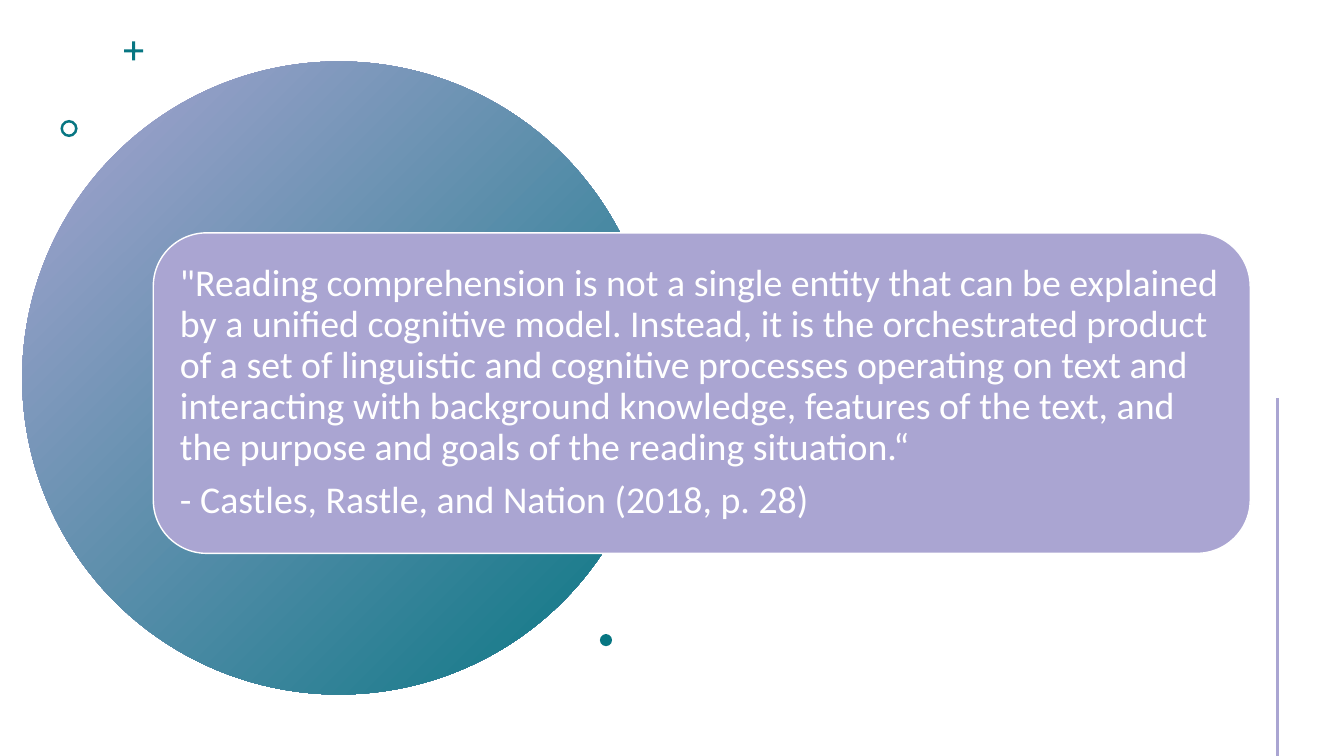
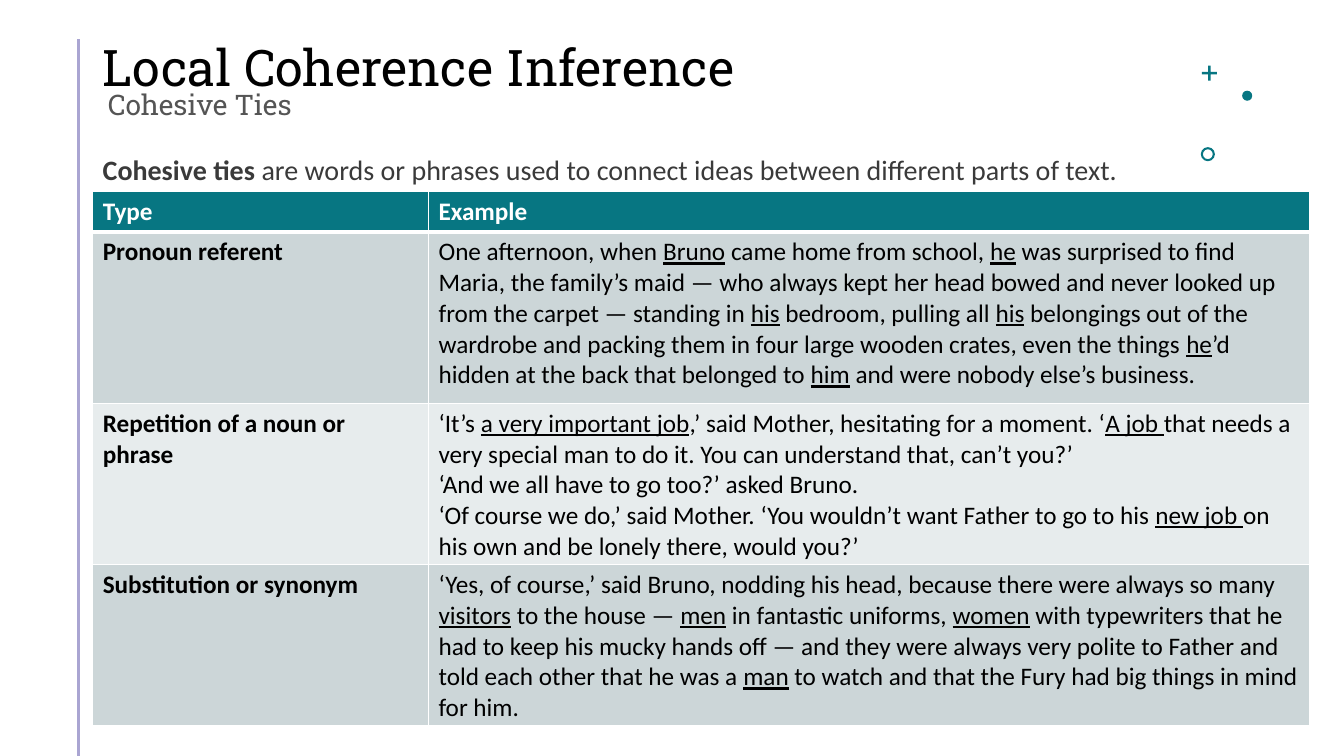
from lxml.etree import SubElement
from pptx import Presentation
from pptx.dml.color import RGBColor
from pptx.enum.shapes import MSO_CONNECTOR, MSO_SHAPE
from pptx.enum.text import MSO_ANCHOR, PP_ALIGN
from pptx.oxml.ns import qn
from pptx.util import Inches, Pt

TEAL = RGBColor(0x07, 0x76, 0x82)
LILAC = RGBColor(0xAA, 0xA5, 0xD2)
WHITE = RGBColor(0xFF, 0xFF, 0xFF)
BLACK = RGBColor(0, 0, 0)
GREY = RGBColor(0x55, 0x55, 0x55)
DARK = RGBColor(0x3A, 0x3A, 0x3A)
BANDS = (RGBColor(0xCC, 0xD6, 0xD8), RGBColor(0xE7, 0xEC, 0xED))
HEAD, BODY = "Roboto Slab", "Calibri"

QUOTE = [
    '"Reading comprehension is not a single entity that can be explained by a '
    "unified cognitive model. Instead, it is the orchestrated product of a set of "
    "linguistic and cognitive processes operating on text and interacting with "
    "background knowledge, features of the text, and the purpose and goals of the "
    "reading situation.“",
    "- Castles, Rastle, and Nation (2018, p. 28)",
]

# Underlined words stand between underscores
TIES = [
    ("Type", ["Example"]),
    ("Pronoun referent", [
        "One afternoon, when _Bruno_ came home from school, _he_ was surprised to "
        "find Maria, the family’s maid — who always kept her head bowed and never "
        "looked up from the carpet — standing in _his_ bedroom, pulling all _his_ "
        "belongings out of the wardrobe and packing them in four large wooden "
        "crates, even the things _he_’d hidden at the back that belonged to _him_ "
        "and were nobody else’s business."]),
    ("Repetition of a noun or phrase", [
        "‘It’s _a very important job_,’ said Mother, hesitating for a moment. "
        "‘_A job _that needs a very special man to do it. You can understand that, "
        "can’t you?’",
        "‘And we all have to go too?’ asked Bruno.",
        "‘Of course we do,’ said Mother. ‘You wouldn’t want Father to go to his "
        "_new job _on his own and be lonely there, would you?’"]),
    ("Substitution or synonym", [
        "‘Yes, of course,’ said Bruno, nodding his head, because there were always "
        "so many _visitors_ to the house — _men_ in fantastic uniforms, _women_ "
        "with typewriters that he had to keep his mucky hands off — and they were "
        "always very polite to Father and told each other that he was a _man_ to "
        "watch and that the Fury had big things in mind for him."]),
]


class Deck:
    """Holds the shared style and the current slide."""

    def __init__(self):
        self.prs = Presentation()
        self.prs.slide_width = Inches(13.33)
        self.prs.slide_height = Inches(7.5)
        self.slide = None

    def page(self):
        self.slide = self.prs.slides.add_slide(self.prs.slide_layouts[6])

    def shape(self, kind, x, y, w, h, fill=TEAL, adj=None):
        item = self.slide.shapes.add_shape(
            kind, Inches(x), Inches(y), Inches(w), Inches(h))
        item.shadow.inherit = False
        item.fill.solid()
        item.fill.fore_color.rgb = fill
        item.line.fill.background()
        if adj is not None:
            item.adjustments[0] = adj
        return item

    def marks(self, plus, ring, dot):
        """Small ornaments, each given as left, top, size."""
        for kind, (x, y, size), adj in (
                (MSO_SHAPE.CROSS, plus, 0.42),
                (MSO_SHAPE.DONUT, ring, 0.15),
                (MSO_SHAPE.OVAL, dot, None)):
            self.shape(kind, x, y, size, size, adj=adj)

    def rule(self, x, top):
        """Upright line that runs down to the slide's foot."""
        line = self.slide.shapes.add_connector(
            MSO_CONNECTOR.STRAIGHT, Inches(x), Inches(top), Inches(x), Inches(7.5))
        line.line.color.rgb = LILAC
        line.line.width = Pt(2)
        SubElement(line._element.spPr, qn("a:effectLst"))

    def runs(self, para, text, size, color, font=BODY, bold=False):
        for i, part in enumerate(text.split("_")):
            if not part:
                continue
            run = para.add_run()
            run.text = part
            run.font.size = Pt(size)
            run.font.name = font
            run.font.bold = bold
            run.font.color.rgb = color
            if i % 2:
                run.font.underline = True

    def fill(self, frame, texts, *style, **more):
        for i, text in enumerate(texts):
            para = frame.add_paragraph() if i else frame.paragraphs[0]
            para.alignment = PP_ALIGN.LEFT
            self.runs(para, text, *style, **more)

    def text(self, x, y, w, h, anchor=MSO_ANCHOR.TOP, inset=None):
        frame = self.slide.shapes.add_textbox(
            Inches(x), Inches(y), Inches(w), Inches(h)).text_frame
        frame.word_wrap = True
        frame.vertical_anchor = anchor
        if inset is not None:
            self.pad(frame, inset)
        return frame

    def pad(self, frame, inset):
        frame.margin_left = frame.margin_right = Inches(inset)
        frame.margin_top = frame.margin_bottom = Inches(inset)

    def title(self, main, sub):
        frame = self.text(0.92, 0.4, 10.76, 0.6, MSO_ANCHOR.MIDDLE)
        self.fill(frame, [main], 36, BLACK, font=HEAD)
        frame.paragraphs[0].line_spacing = 0.9
        frame = self.text(1.07, 0.9, 9.55, 0.42, inset=0)
        self.fill(frame, [sub], 20.2, GREY, font=HEAD)
        frame.paragraphs[0].line_spacing = 0.9

    def edge(self, cell, **widths):
        props = cell._tc.get_or_add_tcPr()
        for side in "LRTB":
            line = SubElement(props, qn("a:ln" + side), w=str(Pt(widths.get(side, 1))))
            paint = SubElement(line, qn("a:solidFill"))
            SubElement(paint, qn("a:srgbClr"), val=str(WHITE))

    def table(self, rows, x, y, cols, highs):
        grid = self.slide.shapes.add_table(
            len(rows), len(cols), Inches(x), Inches(y),
            Inches(sum(cols)), Inches(sum(highs))).table
        grid.first_row = grid.horz_banding = False
        for col, wide in zip(grid.columns, cols):
            col.width = Inches(wide)
        for r, (row, high) in enumerate(zip(rows, highs)):
            grid.rows[r].height = Inches(high)
            for c, texts in enumerate(([row[0]], row[1])):
                cell = grid.cell(r, c)
                self.edge(cell, T=3 if r == 1 else 1, B=1 if r else 3)
                cell.fill.solid()
                cell.fill.fore_color.rgb = BANDS[(r - 1) % 2] if r else TEAL
                self.fill(cell.text_frame, texts, 18, BLACK if r else WHITE,
                          bold=r == 0 or c == 0)


def main():
    deck = Deck()

    # Quote
    deck.page()
    disc = deck.shape(MSO_SHAPE.OVAL, 0.22, 0.61, 6.28, 6.28)
    disc.fill.gradient()
    disc.fill.gradient_angle = 315
    for stop, color, place in zip(disc.fill.gradient_stops, (LILAC, TEAL), (0, 1)):
        stop.color.rgb = color
        stop.position = place
    deck.marks((1.23, 0.41, 0.19), (0.6, 1.19, 0.17), (5.95, 6.29, 0.12))
    deck.rule(12.67, 3.95)
    card = deck.shape(MSO_SHAPE.ROUNDED_RECTANGLE, 1.52, 2.31, 10.88, 3.18, LILAC)
    card.line.color.rgb = WHITE
    card.line.width = Pt(1)
    frame = card.text_frame
    frame.word_wrap = True
    frame.vertical_anchor = MSO_ANCHOR.MIDDLE
    deck.pad(frame, 0.11)
    deck.fill(frame, QUOTE, 27, WHITE)
    for para in frame.paragraphs:
        para.line_spacing = 0.9
        para.space_after = Pt(9)

    # Cohesive ties
    deck.page()
    deck.title("Local Coherence Inference", "Cohesive Ties")
    deck.rule(0.78, 0.39)
    deck.marks((11.92, 0.65, 0.15), (11.91, 1.46, 0.14), (12.32, 0.9, 0.1))
    para = deck.text(0.92, 1.46, 10.65, 0.44).paragraphs[0]
    deck.runs(para, "Cohesive ties ", 20, DARK, bold=True)
    deck.runs(para, "are words or phrases used to connect ideas between "
              "different parts of text.", 20, DARK)
    deck.table(TIES, 0.92, 1.9, (3.33, 8.74), (0.4, 1.7, 1.6, 1.6))

    deck.prs.save("out.pptx")


if __name__ == "__main__":
    main()
